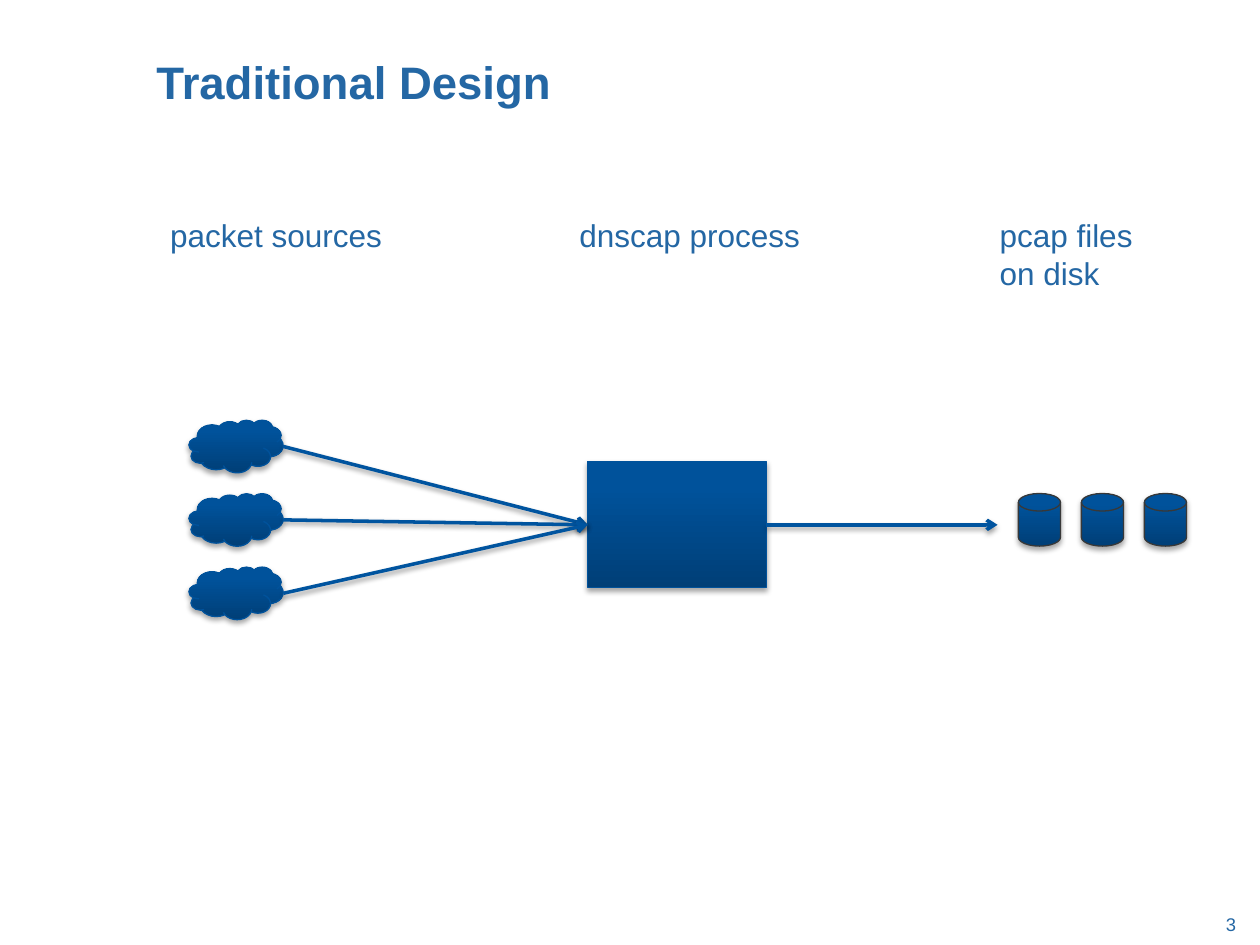
import pptx
import pptx.dml.color
import pptx.enum.shapes
import pptx.enum.text
import pptx.oxml
import pptx.oxml.ns
import pptx.util
from lxml import etree

Cm = pptx.util.Cm
Pt = pptx.util.Pt
qn = pptx.oxml.ns.qn
KIND = pptx.enum.shapes.MSO_SHAPE
ALIGN = pptx.enum.text.PP_ALIGN
ANCHOR = pptx.enum.text.MSO_ANCHOR

COLORS = {
    "text": "2467A4",
    "dark": "003F77",
    "blue": "00529B",
    "arrow": "00549F",
    "gray": "383838",
    "shade": "000000",
}


def rgb(name):
    return pptx.dml.color.RGBColor.from_string(COLORS[name])


class Deck:
    font = "Arial"

    def __init__(self):
        self.prs = pptx.Presentation()
        self.prs.slide_width = Cm(25.4)
        self.prs.slide_height = Cm(19.05)

    def start(self):
        self.slide = self.prs.slides.add_slide(self.prs.slide_layouts[5])

    def style(self, frame, size, bold=False, align=ALIGN.LEFT):
        for para in frame.paragraphs:
            para.alignment = align
            for run in para.runs:
                run.font.name = self.font
                run.font.size = Pt(size)
                run.font.bold = bold
                run.font.color.rgb = rgb("text")

    def title(self, text, x, y, w, h):
        box = self.slide.shapes.title
        box.left, box.top, box.width, box.height = Cm(x), Cm(y), Cm(w), Cm(h)
        frame = box.text_frame
        frame.text = text
        frame.vertical_anchor = ANCHOR.TOP
        frame.margin_top = Cm(0.25)
        self.style(frame, 26, bold=True)

    def label(self, text, x, y, w, h, size=18, align=ALIGN.LEFT, anchor=ANCHOR.TOP):
        box = self.slide.shapes.add_textbox(Cm(x), Cm(y), Cm(w), Cm(h))
        frame = box.text_frame
        frame.text = text
        frame.word_wrap = False
        frame.vertical_anchor = anchor
        self.style(frame, size, align=align)

    def shade(self, item, alpha, dist):
        """Give a shape or connector a soft shadow straight below it."""
        props = item.element.spPr
        effects = etree.SubElement(props, qn("a:effectLst"))
        shadow = etree.SubElement(
            effects, qn("a:outerShdw"), blurRad=str(Pt(3.1)),
            dist=str(Pt(dist)), dir="5400000", rotWithShape="0")
        color = etree.SubElement(shadow, qn("a:srgbClr"), val=COLORS["shade"])
        etree.SubElement(color, qn("a:alpha"), val=str(alpha * 1000))

    def shape(self, kind, x, y, w, h, edge="blue"):
        item = self.slide.shapes.add_shape(kind, Cm(x), Cm(y), Cm(w), Cm(h))
        item.fill.gradient()
        item.fill.gradient_angle = 90
        stops = item.fill.gradient_stops
        for stop, name, pos in zip(stops, ("dark", "blue"), (0, 0.8)):
            stop.color.rgb = rgb(name)
            stop.position = pos
        item.line.color.rgb = rgb(edge)
        item.line.width = Pt(0.75)
        self.shade(item, 35, 1.8)
        return item

    def arrow(self, x1, y1, x2, y2, start=None, end=None):
        """Draw an arrow; start and end are optional (shape, side) joins."""
        line = self.slide.shapes.add_connector(
            pptx.enum.shapes.MSO_CONNECTOR.STRAIGHT, Cm(x1), Cm(y1), Cm(x2), Cm(y2))
        if start:
            line.begin_connect(*start)
        if end:
            line.end_connect(*end)
        line.line.color.rgb = rgb("arrow")
        line.line.width = Pt(2)
        stroke = line.element.spPr.find(qn("a:ln"))
        etree.SubElement(stroke, qn("a:tailEnd"), type="arrow")
        self.shade(line, 38, 1.6)


def main():
    deck = Deck()
    deck.start()
    deck.title("Traditional Design", 2.9, 0.84, 22.1, 2.11)

    deck.label("packet sources", 3.18, 4.23, 4.83, 1.03)
    deck.label("dnscap process", 11.43, 4.23, 5, 1.03)
    deck.label("pcap files\non disk", 19.9, 4.23, 3.23, 1.8)

    left, mid = 11.85, 10.58
    wide, high = 3.6, 2.54
    proc = deck.shape(KIND.RECTANGLE, left, mid - high / 2, wide, high)

    for i in range(3):
        x, y, w, h = 3.81, 8.47 + 1.48 * i, 1.9, 1.06
        deck.shape(KIND.CLOUD, x, y, w, h)
        deck.arrow(x + w, y + h / 2, left, mid, end=(proc, 1))
    deck.arrow(left + wide, mid, 20.11, mid, start=(proc, 3))

    for i in range(3):
        deck.shape(KIND.FLOWCHART_MAGNETIC_DISK, 20.53 + 1.27 * i, 9.95,
                   0.85, 1.06, edge="gray")

    deck.label("3", 24.28, 18.26, 0.89, 0.71, size=10.5,
               align=ALIGN.RIGHT, anchor=ANCHOR.BOTTOM)
    deck.prs.save("out.pptx")


if __name__ == "__main__":
    main()
